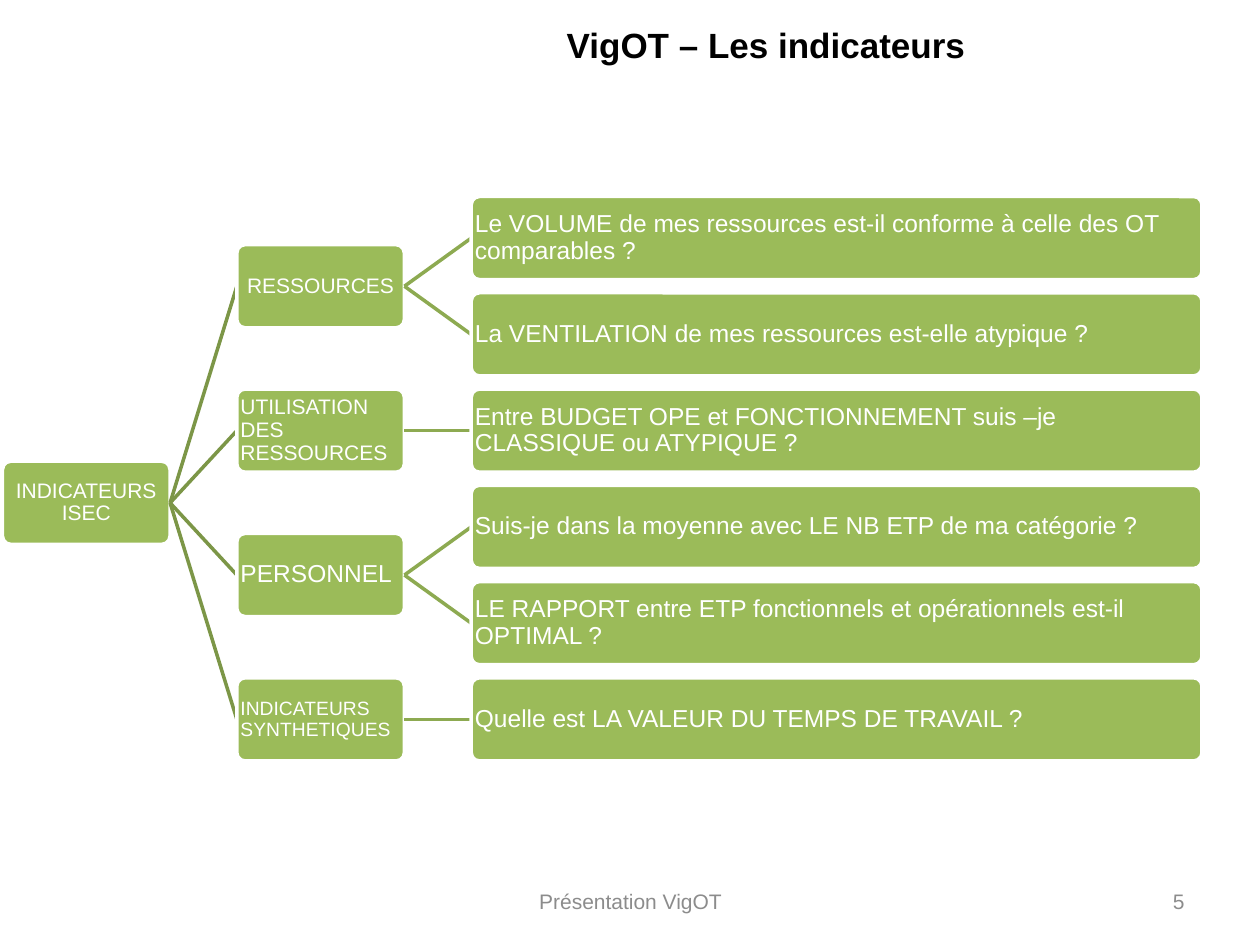
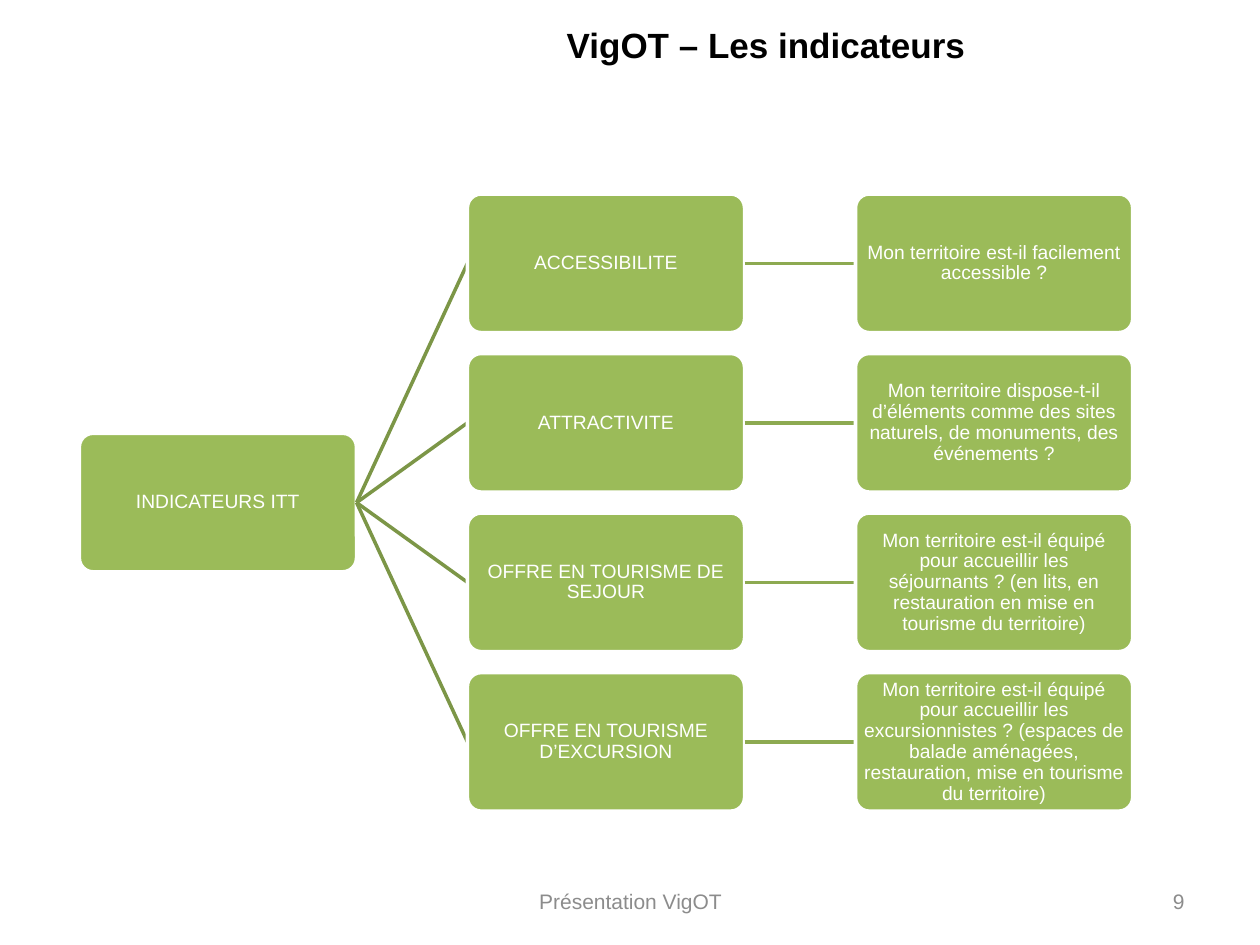
import dataclasses

import pptx
import pptx.dml.color
import pptx.enum.shapes
import pptx.enum.text
import pptx.util
from lxml import etree

ALIGN = pptx.enum.text.PP_ALIGN
ANCHOR = pptx.enum.text.MSO_ANCHOR
COLS, ROWS = 100, 75
DRAWING_NS = "{http://schemas.openxmlformats.org/drawingml/2006/main}"


def rgb(value):
    return pptx.dml.color.RGBColor.from_string(value)


def write(tf, text, size=12, color="FFFFFF", bold=False, align=ALIGN.CENTER,
          anchor=ANCHOR.MIDDLE, spacing=1.0, inset=None):
    tf.word_wrap = True
    tf.auto_size = pptx.enum.text.MSO_AUTO_SIZE.NONE
    tf.vertical_anchor = anchor
    if inset is not None:
        tf.margin_left = tf.margin_right = pptx.util.Inches(inset)
        tf.margin_top = tf.margin_bottom = pptx.util.Inches(inset)
    p = tf.paragraphs[0]
    p.alignment = align
    p.line_spacing = spacing
    r = p.add_run()
    r.text = text
    r.font.name = "Arial"
    r.font.size = pptx.util.Pt(size)
    r.font.bold = bold
    r.font.color.rgb = rgb(color)


@dataclasses.dataclass
class Node:
    text: str
    size: int = 11
    align: ALIGN = ALIGN.CENTER
    children: tuple = ()

    def place(self, next_row=0):
        if not self.children:
            self.row = next_row
            return next_row + 1
        for child in self.children:
            next_row = child.place(next_row)
        self.row = sum(c.row for c in self.children) / len(self.children)
        return next_row


@dataclasses.dataclass
class TreeGrid:
    columns: tuple
    top: float
    pitch: float
    height: float

    def box(self, node, level):
        left, width = self.columns[level]
        return left, self.top + node.row * self.pitch, width, self.height


class Deck:
    BOX = "9BBB59"
    EDGE = "FFFFFF"
    LINKS = ("7C9647", "8DAA51")
    FOOTER = "8C8C8C"

    def __init__(self):
        self.prs = pptx.Presentation()
        self.prs.slide_width = pptx.util.Inches(10)
        self.prs.slide_height = pptx.util.Inches(7.5)
        self.s = None

    def x(self, cols):
        return round(self.prs.slide_width * cols / COLS)

    def y(self, rows):
        return round(self.prs.slide_height * rows / ROWS)

    def area(self, left, top, width, height):
        return self.x(left), self.y(top), self.x(width), self.y(height)

    def slide(self, title, footer, number):
        self.s = self.prs.slides.add_slide(self.prs.slide_layouts[5])
        self.text(footer, (34.2, 69.5, 31.7, 4), color=self.FOOTER)
        self.text(str(number), (71.7, 69.5, 23.3, 4), color=self.FOOTER,
                  align=ALIGN.RIGHT)
        self.title(title)

    def title(self, text):
        sp = self.s.shapes.title
        sp.left, sp.top, sp.width, sp.height = self.area(26.7, 1.4, 68.2, 8.4)
        write(sp.text_frame, text, size=20, color="000000", bold=True,
              anchor=ANCHOR.TOP)

    def text(self, text, box, **fmt):
        sp = self.s.shapes.add_textbox(*self.area(*box))
        write(sp.text_frame, text, **fmt)

    def box(self, node, box):
        sp = self.s.shapes.add_shape(
            pptx.enum.shapes.MSO_SHAPE.ROUNDED_RECTANGLE, *self.area(*box))
        sp.adjustments[0] = 0.1
        sp.shadow.inherit = False
        sp.fill.solid()
        sp.fill.fore_color.rgb = rgb(self.BOX)
        sp.line.color.rgb = rgb(self.EDGE)
        sp.line.width = pptx.util.Pt(2)
        write(sp.text_frame, node.text, size=node.size, align=node.align,
              spacing=0.9, inset=0.01)

    def link(self, parent, child, color):
        left, top, width, height = parent
        sp = self.s.shapes.add_connector(
            pptx.enum.shapes.MSO_CONNECTOR.STRAIGHT,
            self.x(left + width), self.y(top + height / 2),
            self.x(child[0]), self.y(child[1] + child[3] / 2))
        sp.line.color.rgb = rgb(color)
        sp.line.width = pptx.util.Pt(2)
        etree.SubElement(sp._element.spPr, DRAWING_NS + "effectLst")

    def tree(self, root, grid):
        root.place()
        self.branch(root, grid, 0)

    def branch(self, node, grid, level):
        box = grid.box(node, level)
        self.box(node, box)
        for child in node.children:
            self.link(box, grid.box(child, level + 1), self.LINKS[level])
            self.branch(child, grid, level + 1)


def questions(*texts):
    return tuple(Node(text, 14, ALIGN.LEFT) for text in texts)


ISEC = Node("INDICATEURS ISEC", 12, children=(
    Node("RESSOURCES", 12, children=questions(
        "Le VOLUME de mes ressources est-il conforme à celle des OT comparables ?",
        "La VENTILATION de mes ressources est-elle atypique ?")),
    Node("UTILISATION DES RESSOURCES", 12, ALIGN.LEFT, questions(
        "Entre BUDGET OPE et FONCTIONNEMENT suis –je CLASSIQUE ou ATYPIQUE ?")),
    Node("PERSONNEL", 14, ALIGN.LEFT, questions(
        "Suis-je dans la moyenne avec LE NB ETP de ma catégorie ?",
        "LE RAPPORT entre ETP fonctionnels et opérationnels est-il OPTIMAL ?")),
    Node("INDICATEURS SYNTHETIQUES", 11, ALIGN.LEFT, questions(
        "Quelle est LA VALEUR DU TEMPS DE TRAVAIL ?")),
))

ITT_TOPICS = {
    "ACCESSIBILITE": "Mon territoire est-il facilement accessible ?",
    "ATTRACTIVITE":
        "Mon territoire dispose-t-il d’éléments comme des sites naturels, "
        "de monuments, des événements ?",
    "OFFRE EN TOURISME DE SEJOUR":
        "Mon territoire est-il équipé pour accueillir les séjournants ? "
        "(en lits, en restauration en mise en tourisme du territoire)",
    "OFFRE EN TOURISME D’EXCURSION":
        "Mon territoire est-il équipé pour accueillir les excursionnistes ? "
        "(espaces de balade aménagées, restauration, mise en tourisme du territoire)",
}
ITT = Node("INDICATEURS ITT", children=tuple(
    Node(topic, children=(Node(question),))
    for topic, question in ITT_TOPICS.items()))

ISEC_GRID = TreeGrid(((0.2, 13.3), (18.8, 13.3), (37.4, 58)), 15.6, 7.64, 6.6)
ITT_GRID = TreeGrid(tuple((6.3 + 30.8 * i, 22) for i in range(3)), 15.4, 12.66, 11)


def main():
    deck = Deck()
    for number, root, grid in ((5, ISEC, ISEC_GRID), (9, ITT, ITT_GRID)):
        deck.slide("VigOT – Les indicateurs", "Présentation VigOT", number)
        deck.tree(root, grid)
    deck.prs.save("out.pptx")


if __name__ == "__main__":
    main()
